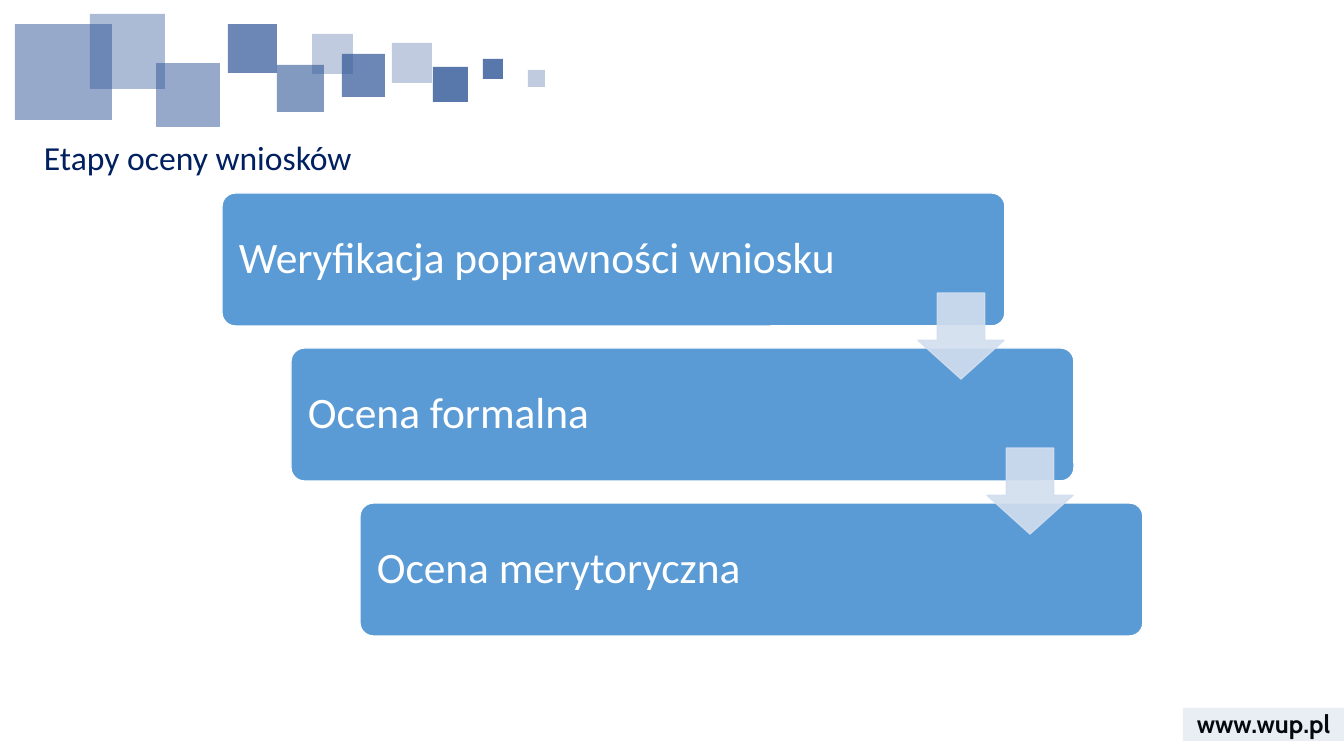
from lxml import etree
from pptx import Presentation
from pptx.dml.color import RGBColor
from pptx.enum.shapes import MSO_SHAPE as Shape
from pptx.enum.text import MSO_ANCHOR as Anchor, PP_ALIGN as Align
from pptx.oxml.ns import qn
from pptx.util import Pt

PX = 12192000 / 1344  # EMU per px

NAVY = RGBColor(0x00, 0x20, 0x60)
SQUARE_BLUE = RGBColor(0x2F, 0x55, 0x97)
STAGE_BLUE = RGBColor(0x5B, 0x9B, 0xD5)
ARROW_BLUE = RGBColor(0xD2, 0xDE, 0xEF)
WHITE = RGBColor(0xFF, 0xFF, 0xFF)
BLACK = RGBColor(0x00, 0x00, 0x00)

# left, top, width, height, opacity in percent
SQUARES = [
    (392, 43, 40, 40, 30),
    (433, 67, 35, 35, 80),
    (342, 54, 43, 43, 70),
    (15, 24, 97, 96, 50),
    (277, 65, 47, 47, 60),
    (156, 63, 64, 64, 50),
    (90, 14, 75, 75, 40),
    (483, 59, 20, 20, 80),
    (228, 24, 49, 49, 70),
    (312, 34, 41, 40, 30),
    (528, 70, 17, 17, 30),
]

STAGES = ["Weryfikacja poprawności wniosku", "Ocena formalna", "Ocena merytoryczna"]
STAGE_LEFT, STAGE_TOP = 222, 193
STAGE_WIDTH, STAGE_HEIGHT = 783, 133
STEP_X, STEP_Y = 69, 155
ARROW_X, ARROW_Y, ARROW_SIZE = 696, 100, 86


def emu(px):
    return round(px * PX)


def apply_format(target, values):
    for name, value in values.items():
        setattr(target, name, value)


def write_text(shape, text, frame_format, paragraph_format, font_format, color):
    frame = shape.text_frame
    apply_format(frame, {"word_wrap": True, **frame_format})
    paragraph = frame.paragraphs[0]
    paragraph.text = text
    apply_format(paragraph, paragraph_format)
    font = paragraph.runs[0].font
    apply_format(font, font_format)
    font.color.rgb = color


def add_text(slide, box, *text_args):
    write_text(slide.shapes.add_textbox(*map(emu, box)), *text_args)


def add_block(slide, kind, box, color, line_color=None, adjustments=(), opacity=100):
    shape = slide.shapes.add_shape(kind, *map(emu, box))
    shape.shadow.inherit = False
    for index, value in enumerate(adjustments):
        shape.adjustments[index] = value
    shape.fill.solid()
    shape.fill.fore_color.rgb = color
    if line_color is None:
        shape.line.fill.background()
    else:
        shape.line.color.rgb = line_color
        shape.line.width = Pt(1)
    if opacity < 100:
        for rgb in shape._element.spPr.iter(qn("a:srgbClr")):
            etree.SubElement(rgb, qn("a:alpha")).set("val", str(opacity * 1000))
    return shape


def add_stage(slide, index, text):
    box = (STAGE_LEFT + index * STEP_X, STAGE_TOP + index * STEP_Y,
           STAGE_WIDTH, STAGE_HEIGHT)
    stage = add_block(slide, Shape.ROUNDED_RECTANGLE, box, STAGE_BLUE, WHITE, [0.1])
    inset = emu(13)
    write_text(stage, text,
               {"vertical_anchor": Anchor.MIDDLE, "margin_left": inset,
                "margin_right": inset, "margin_top": inset, "margin_bottom": inset},
               {"alignment": Align.LEFT, "line_spacing": 0.9},
               {"name": "Calibri", "size": Pt(31)}, WHITE)


def add_stage_arrow(slide, index):
    box = (STAGE_LEFT + ARROW_X + index * STEP_X,
           STAGE_TOP + ARROW_Y + index * STEP_Y, ARROW_SIZE, ARROW_SIZE)
    add_block(slide, Shape.DOWN_ARROW, box, ARROW_BLUE, ARROW_BLUE, [0.55, 0.45], 90)


def main():
    presentation = Presentation()
    presentation.slide_width = emu(1344)
    presentation.slide_height = emu(756)
    slide = presentation.slides.add_slide(presentation.slide_layouts[6])

    # Web address and its pale band
    add_text(slide, (1183, 703, 161, 40), "www.wup.pl",
             {"vertical_anchor": Anchor.MIDDLE}, {"alignment": Align.CENTER},
             {"name": "Cabin", "size": Pt(18), "bold": True}, BLACK)
    add_block(slide, Shape.RECTANGLE, (1183, 708, 161, 33), SQUARE_BLUE, opacity=10)

    # Decorative squares
    for *box, opacity in SQUARES:
        add_block(slide, Shape.RECTANGLE, box, SQUARE_BLUE, opacity=opacity)

    # Title
    add_text(slide, (34, 137, 1251, 55), "Etapy oceny wniosków",
             {"vertical_anchor": Anchor.TOP}, {"line_spacing": 0.9},
             {"name": "Calibri", "size": Pt(24)}, NAVY)

    # Stages, then the arrows that link them
    for index, text in enumerate(STAGES):
        add_stage(slide, index, text)
    for index in range(len(STAGES) - 1):
        add_stage_arrow(slide, index)

    presentation.save("out.pptx")


if __name__ == "__main__":
    main()
